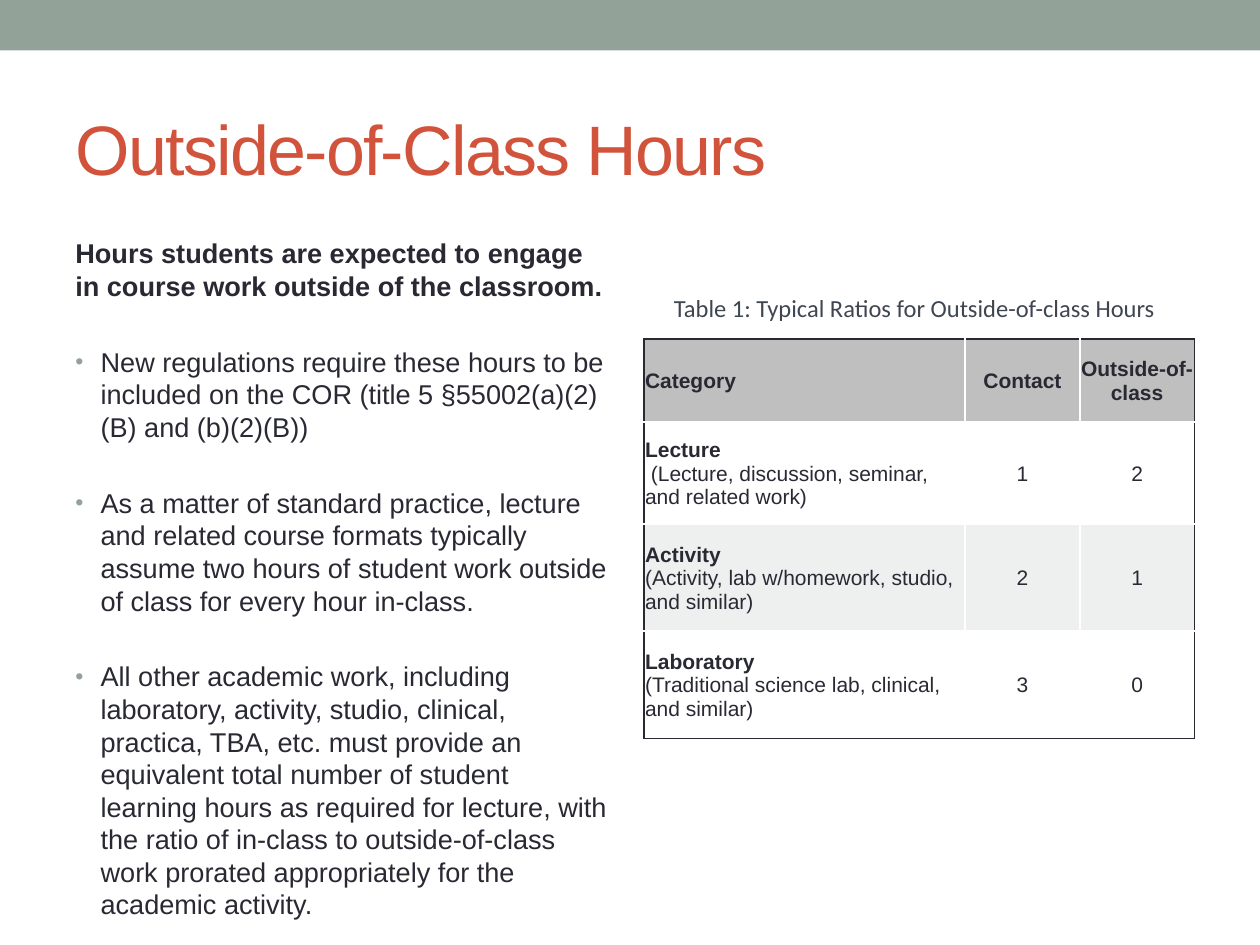
from lxml import etree
from pptx import Presentation
from pptx import util as u
from pptx.dml.color import RGBColor
from pptx.enum import shapes, text
from pptx.oxml import parse_xml
from pptx.oxml.ns import nsdecls, qn

HUES = {"bar": "93A299", "title": "D2533C", "ink": "292934", "note": "3E4652",
        "head": "BFBFBF", "band": "EEF0EF", "white": "FFFFFF"}


class Deck:
    """Holds the style and the current slide."""

    def __init__(self, wide, high):
        self.prs = Presentation()
        self.prs.slide_width, self.prs.slide_height = u.Inches(wide), u.Inches(high)
        self.slide = self.prs.slides.add_slide(self.prs.slide_layouts[5])

    def hue(self, name):
        return RGBColor.from_string(HUES[name])

    def style(self, run, size, hue="ink", bold=False, face="Arial"):
        run.font.name, run.font.size, run.font.bold = face, u.Pt(size), bold
        run.font.color.rgb = self.hue(hue)

    def bar(self, box, hue):
        shape = self.slide.shapes.add_shape(shapes.MSO_SHAPE.RECTANGLE, *map(u.Inches, box))
        shape.shadow.inherit = False
        shape.fill.solid()
        shape.fill.fore_color.rgb = self.hue(hue)
        shape.line.fill.background()

    def title(self, box, words, size):
        shape = self.slide.shapes.title
        shape.left, shape.top, shape.width, shape.height = map(u.Inches, box)
        frame = shape.text_frame
        frame.text = words
        frame.vertical_anchor = text.MSO_ANCHOR.MIDDLE
        para = frame.paragraphs[0]
        para.alignment = text.PP_ALIGN.LEFT
        self.style(para.runs[0], size, "title")
        para.runs[0].font._element.set("spc", "-100")

    def frame(self, box):
        frame = self.slide.shapes.add_textbox(*map(u.Inches, box)).text_frame
        frame.word_wrap = True
        return frame

    def label(self, box, words, size, hue, face):
        frame = self.frame(box)
        frame.text = words
        self.style(frame.paragraphs[0].runs[0], size, hue, face=face)

    def bullet(self, para):
        props = para._p.get_or_add_pPr()
        props.set("marL", str(u.Inches(0.2)))
        props.set("indent", str(u.Inches(-0.2)))
        for xml in (f'<a:buClr {nsdecls("a")}><a:srgbClr val="{HUES["bar"]}"/></a:buClr>',
                    f'<a:buSzPct {nsdecls("a")} val="85000"/>',
                    f'<a:buFont {nsdecls("a")} typeface="Arial"/>',
                    f'<a:buChar {nsdecls("a")} char="•"/>'):
            props.append(parse_xml(xml))

    def body(self, box, lead, items, size):
        frame = self.frame(box)
        for i, words in enumerate([lead, *items]):
            para = frame.add_paragraph() if i else frame.paragraphs[0]
            para.text = words
            if i:
                self.bullet(para)
                para.space_before = u.Pt(24.8)
            para.line_spacing = u.Pt(18.6)
            self.style(para.runs[0], size, bold=not i)

    def edge(self, cell, side, hue):
        line = etree.SubElement(cell._tc.get_or_add_tcPr(), qn("a:" + side), w=str(u.Pt(1)))
        fill = etree.SubElement(line, qn("a:solidFill"))
        etree.SubElement(fill, qn("a:srgbClr"), val=HUES[hue])

    def cell(self, cell, words, size, fill, outer, mid, head):
        cell.margin_left = cell.margin_right = cell.margin_top = u.Inches(0.01)
        cell.margin_bottom = 0
        cell.vertical_anchor = text.MSO_ANCHOR.MIDDLE
        para = cell.text_frame.paragraphs[0]
        para.text = words
        para.alignment = text.PP_ALIGN.CENTER if mid else text.PP_ALIGN.LEFT
        for i, run in enumerate(para.runs):
            self.style(run, size, bold=head or (not mid and i == 0))
        # Borders come before the fill in the cell properties
        for side, out in outer.items():
            self.edge(cell, side, "ink" if out else "white")
        cell.fill.solid()
        cell.fill.fore_color.rgb = self.hue(fill)

    def table(self, box, cols, rows, data, fills, size):
        table = self.slide.shapes.add_table(len(rows), len(cols), *map(u.Inches, box)).table
        table.horz_banding = False
        for col, wide in zip(table.columns, cols):
            col.width = u.Inches(wide)
        for r, high in enumerate(rows):
            table.rows[r].height = u.Inches(high)
            for c, words in enumerate(data[r]):
                outer = {"lnL": c == 0, "lnR": c == len(cols) - 1,
                         "lnT": r == 0, "lnB": r == len(rows) - 1}
                self.cell(table.cell(r, c), words, size, fills[r], outer, c > 0, r == 0)


def main():
    deck = Deck(10, 7.5)

    # Top band and title
    deck.bar((0, 0, 10, 0.4), "bar")
    deck.title((0.5, 0.63, 9, 1.08), "Outside-of-Class Hours", 40)

    # Left column
    deck.body((0.5, 1.83, 4.42, 5.16),
              "Hours students are expected to engage in course work outside of the classroom.",
              ["New regulations require these hours to be included on the COR "
               "(title 5 §55002(a)(2)(B) and (b)(2)(B))",
               "As a matter of standard practice, lecture and related course formats typically "
               "assume two hours of student work outside of class for every hour in-class.",
               "All other academic work, including laboratory, activity, studio, clinical, "
               "practica, TBA, etc. must provide an equivalent total number of student learning "
               "hours as required for lecture, with the ratio of in-class to outside-of-class "
               "work prorated appropriately for the academic activity."], 15.5)

    # Ratio table and its caption
    deck.table((5.11, 2.69, 4.37, 3.17), (2.55, 0.91, 0.91), (0.66, 0.81, 0.85, 0.85),
               [("Category", "Contact", "Outside-of-class"),
                ("Lecture\v (Lecture, discussion, seminar, and related work)", "1", "2"),
                ("Activity\v(Activity, lab w/homework, studio, and similar)", "2", "1"),
                ("Laboratory\v(Traditional science lab, clinical, and similar)", "3", "0")],
               ("head", "white", "band", "white"), 12)
    deck.label((5.25, 2.28, 4.26, 0.34),
               "Table 1: Typical Ratios for Outside-of-class Hours", 14, "note", "Calibri")

    deck.prs.save("out.pptx")


if __name__ == "__main__":
    main()
